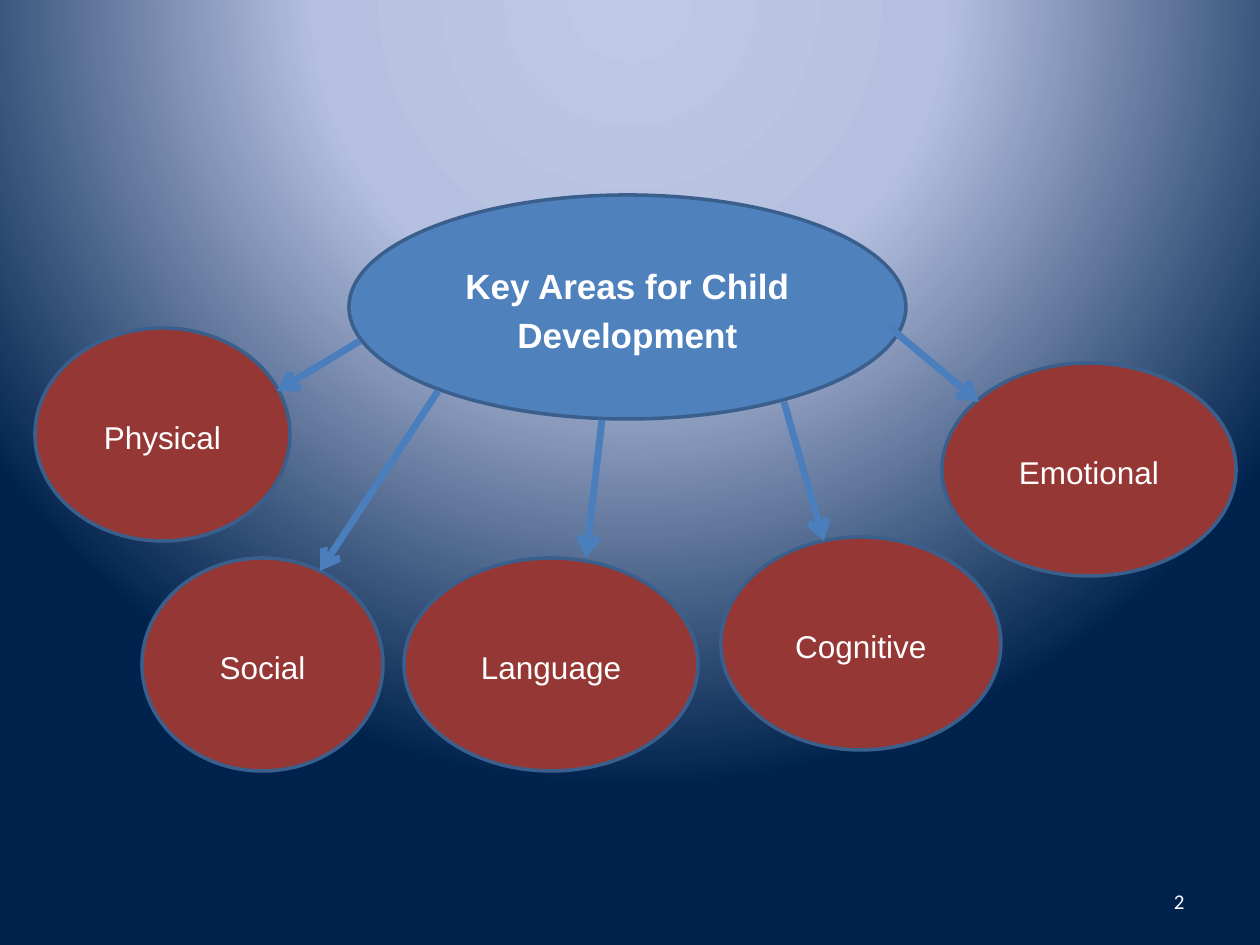
from pptx import Presentation
from pptx.dml.color import RGBColor
from pptx.enum.shapes import MSO_CONNECTOR, MSO_SHAPE
from pptx.enum.text import MSO_ANCHOR, PP_ALIGN
from pptx.oxml import parse_xml
from pptx.oxml.ns import nsdecls, qn
from pptx.oxml.xmlchemy import OxmlElement
from pptx.util import Pt

SCALE = 914400 / 126
WHITE = RGBColor(0xFF, 0xFF, 0xFF)
BLUE = RGBColor(0x4F, 0x81, 0xBD)
RED = RGBColor(0x95, 0x37, 0x35)
EDGE = RGBColor(0x3A, 0x5F, 0x8C)
ARROW = RGBColor(0x4B, 0x7E, 0xBC)
GLOW = [
    (0, RGBColor(0xBF, 0xC9, 0xE5)),
    (40, RGBColor(0xB5, 0xC0, 0xE0)),
    (100, RGBColor(0x00, 0x23, 0x4D)),
]
AREAS = [
    ("Social", 142, 558, 241),
    ("Language", 404, 558, 294),
    ("Cognitive", 721, 537, 280),
    ("Physical", 35, 328, 255),
    ("Emotional", 942, 363, 294),
]
LINKS = [
    (360, 341, 277, 391),
    (438, 391, 320, 571),
    (602, 420, 586, 558),
    (784, 402, 824, 541),
    (888, 326, 979, 402),
]


def emu(*sizes):
    return [round(size * SCALE) for size in sizes]


class Board:
    """Draws styled elements on the current slide."""

    def __init__(self, slide):
        self.slide = slide

    def glow(self, stops):
        self.slide.background.fill.gradient()
        old = self.slide.element.find(".//" + qn("a:gradFill"))
        marks = "".join(
            f'<a:gs pos="{pos * 1000}"><a:srgbClr val="{color}"/></a:gs>'
            for pos, color in stops
        )
        new = parse_xml(
            f'<a:gradFill {nsdecls("a")} rotWithShape="1"><a:gsLst>{marks}</a:gsLst>'
            '<a:path path="circle"><a:fillToRect l="50000" t="-80000" '
            'r="50000" b="180000"/></a:path></a:gradFill>'
        )
        old.getparent().replace(old, new)

    def label(self, shape, text, size, align, font="Arial", bold=False):
        frame = shape.text_frame
        frame.word_wrap = True
        frame.vertical_anchor = MSO_ANCHOR.MIDDLE
        para = frame.paragraphs[0]
        para.alignment = align
        run = para.add_run()
        run.text = text
        run.font.name = font
        run.font.size = Pt(size)
        run.font.bold = bold
        run.font.color.rgb = WHITE
        return para

    def number(self, text, *box):
        shape = self.slide.shapes.add_textbox(*emu(*box))
        self.label(shape, text, 12, PP_ALIGN.RIGHT, "Calibri")

    def oval(self, text, box, fill, size, bold=False):
        shape = self.slide.shapes.add_shape(MSO_SHAPE.OVAL, *emu(*box))
        shape.shadow.inherit = False
        shape.fill.solid()
        shape.fill.fore_color.rgb = fill
        shape.line.color.rgb = EDGE
        shape.line.width = Pt(2)
        para = self.label(shape, text, size, PP_ALIGN.CENTER, bold=bold)
        para.line_spacing = 1.15
        para.space_after = Pt(10)

    def arrow(self, *ends):
        link = self.slide.shapes.add_connector(MSO_CONNECTOR.STRAIGHT, *emu(*ends))
        link.line.color.rgb = ARROW
        link.line.width = Pt(4)
        tail = OxmlElement("a:tailEnd")
        tail.set("type", "arrow")
        props = link.element.spPr
        props.find(qn("a:ln")).append(tail)
        props.append(OxmlElement("a:effectLst"))


def main():
    deck = Presentation()
    deck.slide_width, deck.slide_height = emu(1260, 945)
    board = Board(deck.slides.add_slide(deck.slide_layouts[6]))
    board.glow(GLOW)
    board.number("2", 903, 876, 294, 50)
    board.oval("Key Areas for Child Development", (349, 195, 557, 224), BLUE, 20, True)
    for name, left, top, width in AREAS:
        board.oval(name, (left, top, width, 213), RED, 18)
    for ends in LINKS:
        board.arrow(*ends)
    deck.save("out.pptx")


if __name__ == "__main__":
    main()
